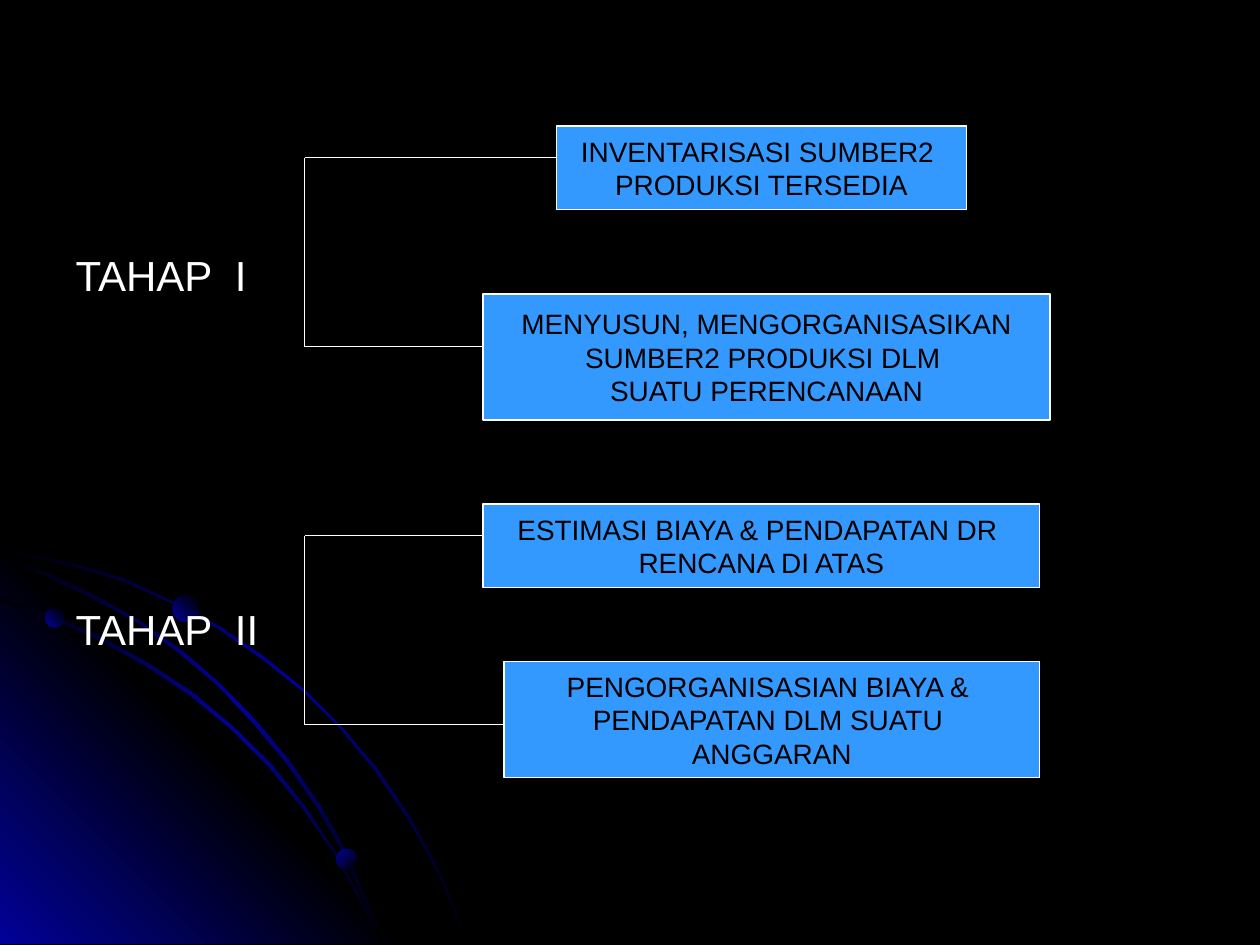
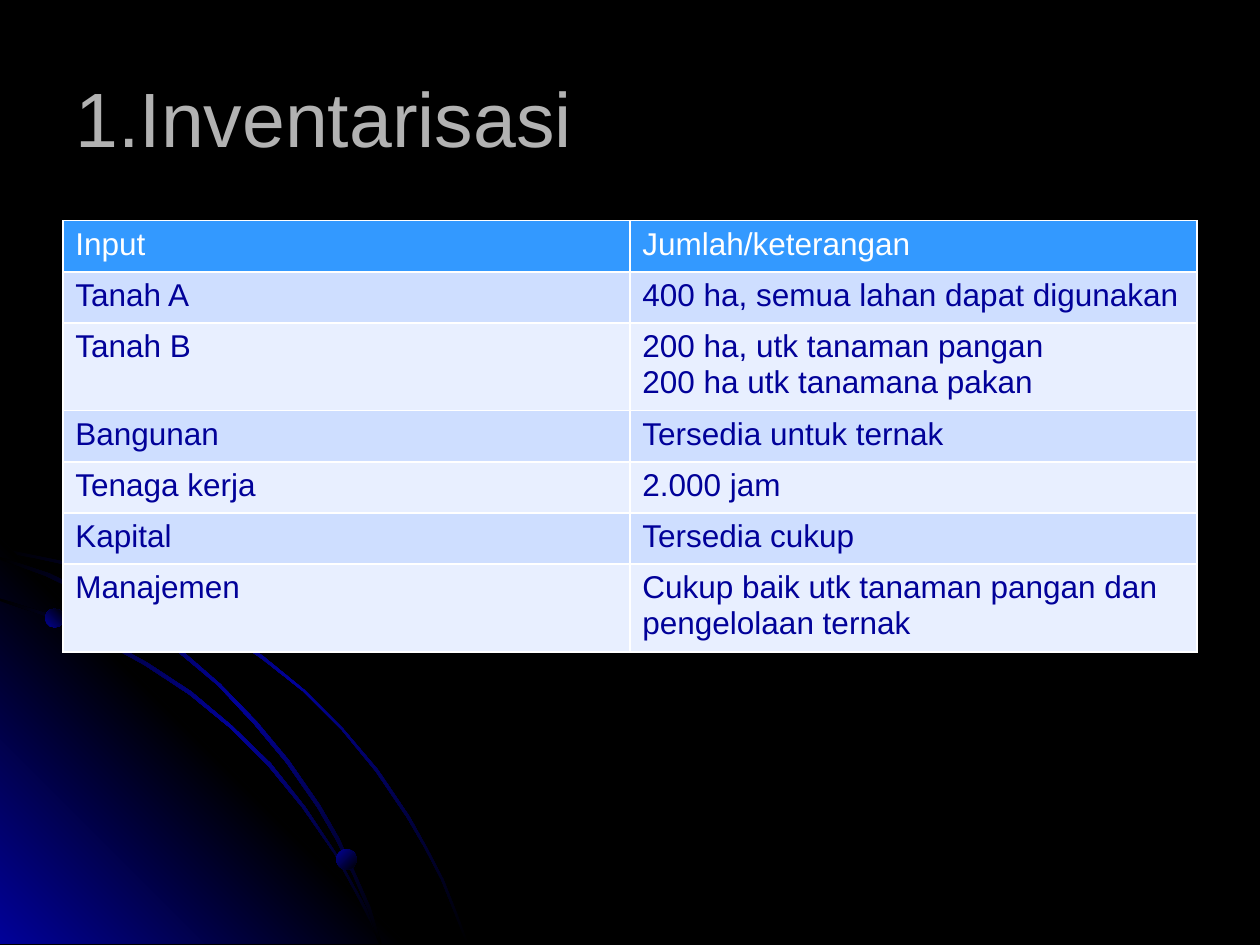
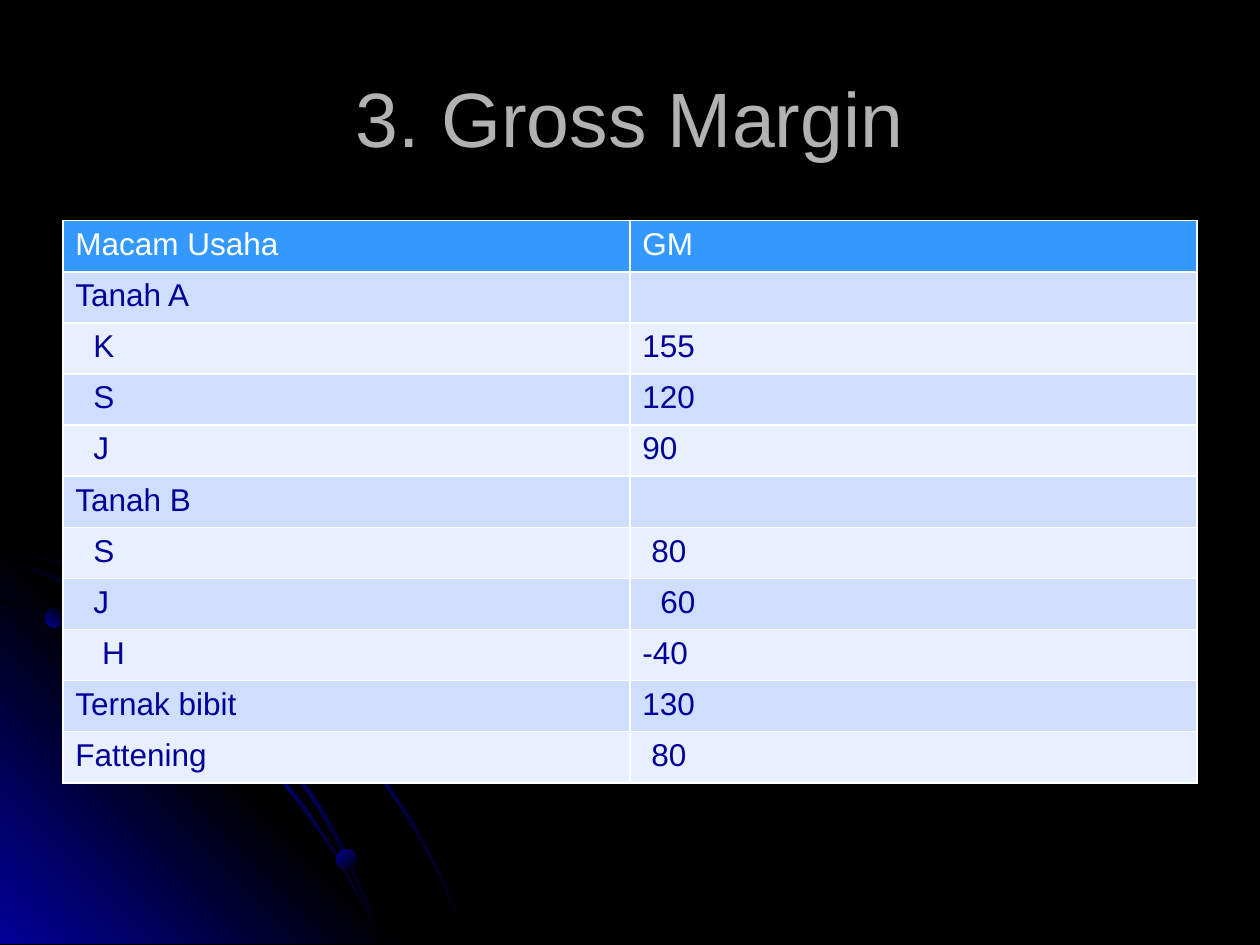
"""Build three slides on farm planning stages, resource inventory and gross margin."""
from dataclasses import dataclass
from typing import Optional

from lxml import etree
from pptx import Presentation
from pptx import slide as s
from pptx import util as u
from pptx.dml import color as dml
from pptx.enum import shapes, text
from pptx.oxml import ns
from pptx.shapes import base
from pptx.text import text as t

COLORS = {
    "background": "000000",
    "white": "FFFFFF",
    "title": "B2B2B2",
    "accent": "3399FF",
    "navy": "010199",
    "odd_row": "CEDEFF",
    "even_row": "E8EFFF",
}
FONT = "Arial"
MARGIN = 1.27
CONTENT_WIDTH = 22.86
STEM_X = 6.14
ROW_HEIGHT = 1.03
CELL_INSET = 0.25
INDENT_STEP = 0.18
POINT_SCALE = u.Cm(2.54) / 100
GLOW = ("background", "navy", "background")
CORNER = ("navy", "background", "navy")
BALL = ("navy", "background")


@dataclass(frozen=True)
class Outline:
    points: list[tuple[int, int]]
    stops: tuple[str, ...]
    angle: int


@dataclass(frozen=True)
class Ball:
    left: float
    top: float
    size: float
    angle: int


@dataclass(frozen=True)
class Box:
    content: str
    left: float
    top: float
    width: float
    height: float
    branch_y: float


@dataclass(frozen=True)
class Row:
    label: str
    value: str = ""
    label_indent: int = 0
    value_indent: int = 0
    height: float = ROW_HEIGHT


OUTLINES = [
    Outline([(57, 447), (28, 441), (0, 435), (0, 438), (28, 443), (56, 449), (97, 461),
             (135, 478), (173, 499), (208, 523), (241, 549), (271, 579), (298, 612),
             (323, 649), (337, 673), (350, 698), (360, 723), (370, 749), (372, 749),
             (362, 723), (352, 698), (339, 673), (325, 648), (300, 611), (272, 578),
             (242, 548), (209, 521), (174, 497), (136, 477), (98, 459)], GLOW, 45),
    Outline([(322, 749), (0, 749), (0, 427)], CORNER, 315),
    Outline([(285, 714), (294, 732), (301, 749), (303, 749), (296, 730), (286, 712),
             (266, 676), (242, 640), (215, 606), (184, 576), (152, 549), (117, 526),
             (79, 505), (41, 488), (0, 475), (0, 477), (39, 490), (77, 507), (115, 528),
             (150, 551), (183, 578), (213, 608), (240, 641), (265, 677)], GLOW, 45),
    Outline([(0, 442), (0, 444), (36, 457), (74, 475), (109, 494), (142, 518), (173, 544),
             (202, 575), (227, 605), (252, 641), (267, 667), (280, 694), (292, 722),
             (301, 749), (303, 749), (294, 720), (282, 693), (269, 665), (254, 639),
             (229, 603), (204, 573), (175, 543), (144, 516), (111, 493), (76, 473),
             (39, 455)], GLOW, 45),
]
BALLS = [
    Ball(0.91, 12.27, 0.38, 315),
    Ball(6.78, 17.12, 0.41, 45),
    Ball(3.48, 12.01, 0.53, 315),
]
STAGES = {
    "TAHAP  I": [
        Box("INVENTARISASI SUMBER2 \nPRODUKSI TERSEDIA", 11.22, 2.54, 8.26, 1.69, 3.18),
        Box("MENYUSUN, MENGORGANISASIKAN\nSUMBER2 PRODUKSI DLM \nSUATU PERENCANAAN",
            9.74, 5.93, 11.43, 2.54, 6.99),
    ],
    "TAHAP  II": [
        Box("ESTIMASI BIAYA & PENDAPATAN DR \nRENCANA DI ATAS",
            9.74, 10.16, 11.22, 1.69, 10.8),
        Box("PENGORGANISASIAN BIAYA & \nPENDAPATAN DLM SUATU \nANGGARAN",
            10.16, 13.34, 10.8, 2.33, 14.61),
    ],
}
INVENTORY = [
    Row("Input", "Jumlah/keterangan"),
    Row("Tanah A", "400 ha, semua lahan dapat digunakan"),
    Row("Tanah B", "200 ha, utk tanaman pangan\n200 ha utk tanamana pakan", height=1.77),
    Row("Bangunan", "Tersedia untuk ternak"),
    Row("Tenaga kerja", "2.000 jam"),
    Row("Kapital", "Tersedia cukup"),
    Row("Manajemen", "Cukup baik utk tanaman pangan dan pengelolaan ternak", height=1.77),
]
GROSS_MARGIN = [
    Row("Macam Usaha", "GM"),
    Row("Tanah A"),
    Row("K", "155", 2),
    Row("S", "120", 2),
    Row("J", "90", 2),
    Row("Tanah B"),
    Row("S", "80", 2, 1),
    Row("J", "60", 2, 2),
    Row("H", "-40", 3),
    Row("Ternak bibit", "130"),
    Row("Fattening", "80", 0, 1),
]


def rgb(name: str) -> dml.RGBColor:
    """Return the named palette colour."""
    return dml.RGBColor.from_string(COLORS[name])


def write(frame: t.TextFrame, content: str, *, size: int, color: str,
          align: Optional[text.PP_ALIGN] = None) -> None:
    """Write one formatted paragraph for each line of the content."""
    for index, line in enumerate(content.split("\n")):
        paragraph = frame.add_paragraph() if index else frame.paragraphs[0]
        paragraph.alignment = align
        run = paragraph.add_run()
        run.text = line
        run.font.name = FONT
        run.font.size = u.Pt(size)
        run.font.bold = False
        run.font.color.rgb = rgb(color)


def place(shape: base.BaseShape, left: float, top: float, width: float, height: float) -> None:
    """Move and size a shape in centimetres."""
    shape.left, shape.top = u.Cm(left), u.Cm(top)
    shape.width, shape.height = u.Cm(width), u.Cm(height)


def add_color(parent: etree._Element, name: str) -> None:
    """Append a palette colour to an XML fill or gradient stop."""
    etree.SubElement(parent, ns.qn("a:srgbClr"), val=COLORS[name])


def fill_gradient(shape: base.BaseShape, stops: tuple[str, ...], angle: int) -> None:
    """Give an unlined shape an even linear gradient."""
    shape.shadow.inherit = False
    shape.line.fill.background()
    gradient = etree.Element(ns.qn("a:gradFill"), rotWithShape="1")
    stop_list = etree.SubElement(gradient, ns.qn("a:gsLst"))
    for index, name in enumerate(stops):
        position = 100000 * index // (len(stops) - 1)
        add_color(etree.SubElement(stop_list, ns.qn("a:gs"), pos=str(position)), name)
    etree.SubElement(gradient, ns.qn("a:lin"), ang=str(angle * 60000), scaled="0")
    shape.element.spPr.insert(2, gradient)


def decorate_master(master: s.SlideMaster, slide: s.Slide) -> None:
    """Set the shared background and move the drawn corner art to the master."""
    master.background.fill.solid()
    master.background.fill.fore_color.rgb = rgb("background")
    artwork = []
    for outline in OUTLINES:
        builder = slide.shapes.build_freeform(*outline.points[0], scale=POINT_SCALE)
        builder.add_line_segments(outline.points[1:], close=True)
        shape = builder.convert_to_shape()
        fill_gradient(shape, outline.stops, outline.angle)
        artwork.append(shape)
    for ball in BALLS:
        shape = slide.shapes.add_shape(
            shapes.MSO_SHAPE.OVAL, u.Cm(ball.left), u.Cm(ball.top),
            u.Cm(ball.size), u.Cm(ball.size))
        fill_gradient(shape, BALL, ball.angle)
        artwork.append(shape)
    for index, shape in enumerate(artwork):
        shape.element.nvSpPr.cNvPr.id = 100 + index
        master.element.cSld.spTree.insert(2 + index, shape.element)


def add_line(slide: s.Slide, x1: float, y1: float, x2: float, y2: float) -> None:
    """Draw a thin white line."""
    line = slide.shapes.add_connector(
        shapes.MSO_CONNECTOR.STRAIGHT, u.Cm(x1), u.Cm(y1), u.Cm(x2), u.Cm(y2))
    line.line.color.rgb = rgb("white")
    line.line.width = u.Pt(0.75)
    etree.SubElement(line.element.spPr, ns.qn("a:effectLst"))


def add_box(slide: s.Slide, box: Box) -> None:
    """Draw a step box."""
    shape = slide.shapes.add_shape(
        shapes.MSO_SHAPE.RECTANGLE, u.Cm(box.left), u.Cm(box.top),
        u.Cm(box.width), u.Cm(box.height))
    shape.shadow.inherit = False
    shape.fill.solid()
    shape.fill.fore_color.rgb = rgb("accent")
    shape.line.color.rgb = rgb("white")
    shape.line.width = u.Pt(0.75)
    shape.text_frame.word_wrap = False
    shape.text_frame.vertical_anchor = text.MSO_ANCHOR.MIDDLE
    write(shape.text_frame, box.content, size=16, color="background",
          align=text.PP_ALIGN.CENTER)


def fill_stages(slide: s.Slide) -> None:
    """Show each stage label with its bracket and step boxes."""
    title = slide.shapes.title.element
    title.getparent().remove(title)
    body = slide.placeholders[1]
    place(body, MARGIN, MARGIN, CONTENT_WIDTH, 16.51)
    body.text_frame.margin_top = u.Cm(3.75)
    write(body.text_frame, "\n".join(STAGES), size=24, color="white")
    for paragraph, space in zip(body.text_frame.paragraphs, (0, 174)):
        paragraph.space_before = u.Pt(space)
        properties = paragraph._p.get_or_add_pPr()
        properties.set("marL", str(u.Cm(0.95)))
        properties.set("indent", str(u.Cm(-0.95)))
        etree.SubElement(properties, ns.qn("a:buNone"))
    for boxes in STAGES.values():
        for box in boxes:
            add_box(slide, box)
            add_line(slide, box.left, box.branch_y, STEM_X, box.branch_y)
        add_line(slide, STEM_X, boxes[0].branch_y, STEM_X, boxes[-1].branch_y)


def add_borders(cell_properties: etree._Element) -> None:
    """Put white borders around a table cell."""
    for index, side in enumerate(("lnL", "lnR", "lnT", "lnB")):
        border = etree.Element(ns.qn(f"a:{side}"), w=str(u.Pt(1)))
        add_color(etree.SubElement(border, ns.qn("a:solidFill")), "white")
        cell_properties.insert(index, border)


def add_table_slide(presentation: Presentation, title: str, rows: list[Row],
                    align: text.PP_ALIGN) -> None:
    """Add a slide with a title and a banded two-column table."""
    slide = presentation.slides.add_slide(presentation.slide_layouts[5])
    heading = slide.shapes.title
    place(heading, MARGIN, 0.76, CONTENT_WIDTH, 3.18)
    heading.text_frame.vertical_anchor = text.MSO_ANCHOR.MIDDLE
    write(heading.text_frame, title, size=44, color="title", align=align)
    table = slide.shapes.add_table(
        len(rows), 2, u.Cm(MARGIN), u.Cm(4.45), u.Cm(CONTENT_WIDTH),
        u.Cm(sum(row.height for row in rows))).table
    for index, row in enumerate(rows):
        table.rows[index].height = u.Cm(row.height)
        band = "odd_row" if index % 2 else "even_row"
        entries = ((row.label, row.label_indent), (row.value, row.value_indent))
        for cell, (content, indent) in zip(table.rows[index].cells, entries):
            cell.fill.solid()
            cell.fill.fore_color.rgb = rgb(band if index else "accent")
            cell.margin_left = u.Cm(CELL_INSET + INDENT_STEP * indent)
            add_borders(cell._tc.get_or_add_tcPr())
            if content:
                write(cell.text_frame, content, size=18, color="navy" if index else "white")


def main() -> None:
    """Build and save the presentation."""
    presentation = Presentation()
    presentation.slide_width, presentation.slide_height = u.Cm(25.4), u.Cm(19.05)
    slide = presentation.slides.add_slide(presentation.slide_layouts[1])
    decorate_master(presentation.slide_master, slide)
    fill_stages(slide)
    add_table_slide(presentation, "1.Inventarisasi", INVENTORY, text.PP_ALIGN.LEFT)
    add_table_slide(presentation, "3. Gross Margin", GROSS_MARGIN, text.PP_ALIGN.CENTER)
    presentation.save("out.pptx")


if __name__ == "__main__":
    main()
